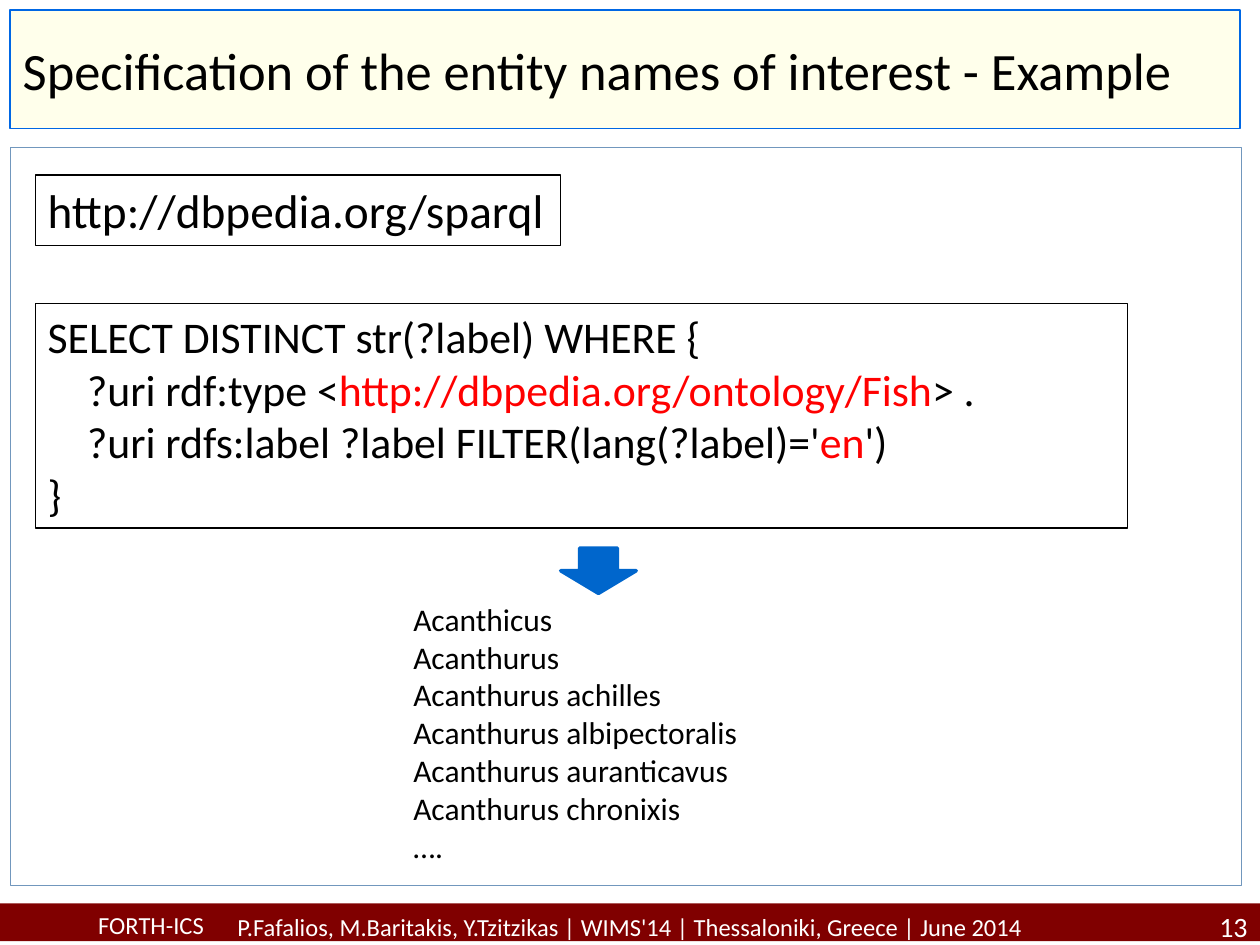
"""Build the slide on specifying entity names with a SPARQL query."""
from dataclasses import dataclass

from lxml import etree
from pptx import Presentation
from pptx.dml.color import RGBColor
from pptx.enum.shapes import MSO_SHAPE
from pptx.enum.text import MSO_ANCHOR, MSO_AUTO_SIZE, PP_ALIGN
from pptx.oxml.ns import qn
from pptx.util import Inches, Pt

RECT, ARROW = MSO_SHAPE.RECTANGLE, MSO_SHAPE.DOWN_ARROW
LEFT, MID, RIGHT = PP_ALIGN.LEFT, PP_ALIGN.CENTER, PP_ALIGN.RIGHT
TOP, CENTER = MSO_ANCHOR.TOP, MSO_ANCHOR.MIDDLE
FIXED = MSO_AUTO_SIZE.NONE
FONT = "Calibri"
BLACK, WHITE, RED = "000000", "FFFFFF", "FF0000"

Box = tuple[float, float, float, float]
Line = list[tuple[str, str]]


@dataclass
class Panel:
    """A filled or outlined preset shape."""
    box: Box
    fill: str = ""
    edge: str = ""
    width: float = 0.75
    kind: int = RECT


@dataclass
class Label:
    """Text lines, each a list of (text, colour) runs."""
    lines: list[Line]
    size: float
    align: int = LEFT
    anchor: int = TOP
    wrap: bool = True


def color(code: str) -> RGBColor:
    """Turn a hex string into a colour."""
    return RGBColor.from_string(code)


def plain(text: str, code: str = BLACK) -> list[Line]:
    """Split text into lines of one colour."""
    return [[(line, code)] for line in text.split("\n")]


def place(shape, box: Box) -> None:
    """Move and size a shape."""
    shape.left, shape.top, shape.width, shape.height = map(Inches, box)


def paint(shape, panel: Panel) -> None:
    """Set the fill and outline of a shape."""
    if panel.fill:
        shape.fill.solid()
        shape.fill.fore_color.rgb = color(panel.fill)
    else:
        shape.fill.background()
    if panel.edge:
        shape.line.color.rgb = color(panel.edge)
        shape.line.width = Pt(panel.width)
    else:
        shape.line.fill.background()


def write(shape, label: Label) -> None:
    """Fill a shape with the lines of a label."""
    frame = shape.text_frame
    frame.auto_size = FIXED
    frame.word_wrap = label.wrap
    frame.vertical_anchor = label.anchor
    for i, line in enumerate(label.lines):
        para = frame.add_paragraph() if i else frame.paragraphs[0]
        para.alignment = label.align
        para.space_before = Pt(0)
        para.font.name, para.font.size = FONT, Pt(label.size)
        for text, code in line:
            run = para.add_run()
            run.text = text
            run.font.color.rgb = color(code)


def draw(slide, panel: Panel, label: Label | None = None) -> None:
    """Add a panel, with text if given."""
    shape = slide.shapes.add_shape(panel.kind, *map(Inches, panel.box))
    shape.shadow.inherit = False
    paint(shape, panel)
    if label:
        write(shape, label)


def note(slide, box: Box, label: Label) -> None:
    """Add a text box."""
    write(slide.shapes.add_textbox(*map(Inches, box)), label)


def unmark(shape) -> None:
    """Strip bullets and indents from a list."""
    for para in shape.text_frame.paragraphs:
        props = para._p.get_or_add_pPr()
        props.set("marL", "0")
        props.set("indent", "0")
        bullet = etree.Element(qn("a:buNone"))
        props.find(qn("a:defRPr")).addprevious(bullet)


TITLE = "Specification of the entity names of interest - Example"
CREDIT = ("P.Fafalios, M.Baritakis, Y.Tzitzikas | WIMS'14 | "
          "Thessaloniki, Greece | June 2014")
QUERY = [
    [("SELECT DISTINCT str(?label) WHERE {", BLACK)],
    [("    ?uri rdf:type <", BLACK),
     ("http://dbpedia.org/ontology/Fish", RED), ("> .", BLACK)],
    [("    ?uri rdfs:label ?label FILTER(lang(?label)='", BLACK),
     ("en", RED), ("')", BLACK)],
    [("}", BLACK)],
]
NAMES = """Acanthicus
Acanthurus
Acanthurus achilles
Acanthurus albipectoralis
Acanthurus auranticavus
Acanthurus chronixis
…."""


def main() -> None:
    """Build and save the slide."""
    deck = Presentation()
    deck.slide_width, deck.slide_height = Inches(10), Inches(7.5)
    slide = deck.slides.add_slide(deck.slide_layouts[1])
    title, names = slide.placeholders

    head = Panel((0.08, 0.08, 9.76, 0.94), "FFFFEB", "0067E4", 1)
    place(title, head.box)
    paint(title, head)
    write(title, Label(plain(TITLE), 30, anchor=CENTER))

    draw(slide, Panel((0, 7.17, 10, 0.3), "800000"))
    note(slide, (0.68, 7.17, 1.21, 0.4), Label(plain("FORTH-ICS", WHITE), 14))
    note(slide, (0, 7.19, 10, 0.33), Label(plain(CREDIT, WHITE), 14, MID))
    note(slide, (9.21, 7.17, 0.79, 0.35), Label(plain("13", WHITE), 16, RIGHT))

    draw(slide, Panel((0.08, 1.17, 9.77, 5.86), edge="7197BD", width=0.25))
    draw(slide, Panel((0.28, 1.39, 4.17, 0.56), edge=BLACK),
         Label(plain("http://dbpedia.org/sparql"), 27, wrap=False))
    draw(slide, Panel((0.28, 2.41, 8.67, 1.78), WHITE, BLACK),
         Label(QUERY, 25))
    draw(slide, Panel((4.45, 4.35, 0.6, 0.36), "0066CC", "0066CC", 2, ARROW))

    place(names, (3.18, 4.71, 3.39, 2.22))
    write(names, Label(plain(NAMES), 18))
    unmark(names)

    deck.save("out.pptx")


if __name__ == "__main__":
    main()
